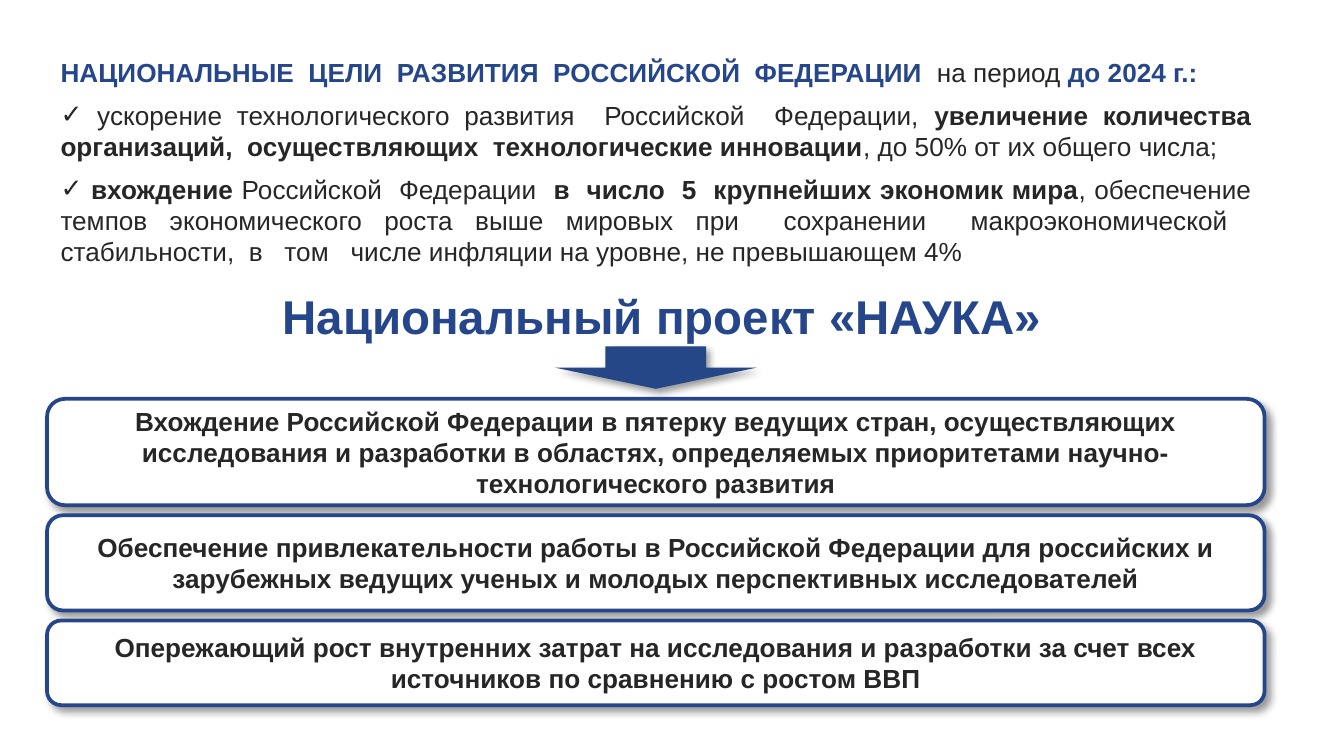
from lxml import etree
from pptx import Presentation
from pptx.dml.color import RGBColor
from pptx.enum.shapes import MSO_SHAPE
from pptx.enum.text import MSO_ANCHOR, MSO_AUTO_SIZE, PP_ALIGN
from pptx.oxml import parse_xml
from pptx.oxml.ns import qn
from pptx.util import Cm, Pt

ARROW, ROUND = MSO_SHAPE.DOWN_ARROW, MSO_SHAPE.ROUNDED_RECTANGLE
MIDDLE, TOP = MSO_ANCHOR.MIDDLE, MSO_ANCHOR.TOP
CENTER, JUSTIFY = PP_ALIGN.CENTER, PP_ALIGN.JUSTIFY
GROW, FIXED = MSO_AUTO_SIZE.SHAPE_TO_FIT_TEXT, MSO_AUTO_SIZE.NONE
BLUE, DARK, WHITE = "25468A", "262626", "FFFFFF"
LEFT, WIDTH, GAP = 0.89, 23.01, 0.19
SHADOW = (
    '<a:outerShdw xmlns:a="http://schemas.openxmlformats.org/drawingml/2006/main"'
    ' blurRad="50800" dist="38100" dir="2700000" algn="tl" rotWithShape="0">'
    '<a:srgbClr val="000000"><a:alpha val="40000"/></a:srgbClr></a:outerShdw>'
)


def style(run, size, color, bold=True):
    font = run.font
    font.name, font.size, font.bold = "Arial", Pt(size), bold
    font.color.rgb = RGBColor.from_string(color)


def add_block(kind, left, top, width, height, fill):
    block = slide.shapes.add_shape(kind, Cm(left), Cm(top), Cm(width), Cm(height))
    block.fill.solid()
    block.fill.fore_color.rgb = RGBColor.from_string(fill)
    block.shadow.inherit = False
    block._element.spPr.find(qn("a:effectLst")).append(parse_xml(SHADOW))
    return block


prs = Presentation()
prs.slide_width, prs.slide_height = Cm(25.4), Cm(14.29)
slide = prs.slides.add_slide(prs.slide_layouts[1])

# National goals: (text, bold) runs, the first paragraph is the heading
goals = [
    [("НАЦИОНАЛЬНЫЕ  ЦЕЛИ  РАЗВИТИЯ  РОССИЙСКОЙ  ФЕДЕРАЦИИ  ", True),
     ("на период ", False),
     ("до 2024 г.:", True)],
    [(" ускорение технологического развития  Российской  Федерации, ", False),
     ("увеличение количества организаций,  осуществляющих  "
      "технологические инновации", True),
     (", до 50% от их общего числа;", False)],
    [(" ", False),
     ("вхождение", True),
     (" Российской  Федерации  ", False),
     ("в  число  5  крупнейших экономик мира", True),
     (", обеспечение темпов экономического роста выше мировых при  сохранении  "
      "макроэкономической  стабильности,  в   том   числе инфляции на уровне, "
      "не превышающем 4%", False)],
]
body = slide.placeholders[1]
body.left, body.top, body.width, body.height = Cm(LEFT), Cm(0.94), Cm(WIDTH), Cm(4.27)
frame = body.text_frame
frame.word_wrap, frame.auto_size, frame.vertical_anchor = True, GROW, TOP
for i, goal in enumerate(goals):
    para = frame.add_paragraph() if i else frame.paragraphs[0]
    props = para._p.get_or_add_pPr()
    props.set("marL", "0")
    props.set("indent", "0")
    if i:
        etree.SubElement(props, qn("a:buFont"), typeface="Arial")
        etree.SubElement(props, qn("a:buChar"), char="✓")
    else:
        etree.SubElement(props, qn("a:buNone"))
    para.alignment = JUSTIFY
    para.space_before = Pt(0)
    para.space_after = Pt(6 if i < len(goals) - 1 else 0)
    for text, bold in goal:
        run = para.add_run()
        run.text = text
        style(run, 14, BLUE if bold and i == 0 else DARK, bold)

# Project title
title = slide.shapes.title
title.left, title.top, title.width, title.height = Cm(1.09), Cm(5.16), Cm(22.86), Cm(1.6)
title.text_frame.text = "Национальный проект «НАУКА»"
title.text_frame.auto_size = FIXED
title.text_frame.vertical_anchor = MIDDLE
para = title.text_frame.paragraphs[0]
para.alignment = CENTER
style(para.runs[0], 25.4, BLUE)

# Arrow from the title to the aims
arrow = add_block(ARROW, 10.49, 6.55, 3.81, 0.8, "254787")
arrow.line.fill.background()

# Project aims: height and text, stacked with equal gaps
aims = [
    (2.01, "Вхождение Российской Федерации в пятерку ведущих стран, осуществляющих "
           "исследования и разработки в областях, определяемых приоритетами "
           "научно-технологического развития"),
    (1.8, "Обеспечение привлекательности работы в Российской Федерации для российских "
          "и зарубежных ведущих ученых и молодых перспективных исследователей"),
    (1.6, "Опережающий рост внутренних затрат на исследования и разработки за счет "
          "всех источников по сравнению с ростом ВВП"),
]
top = 7.54
for height, text in aims:
    box = add_block(ROUND, LEFT, top, WIDTH, height, WHITE)
    box.line.color.rgb = RGBColor.from_string(BLUE)
    box.line.width = Pt(2)
    frame = box.text_frame
    frame.text = text
    frame.word_wrap, frame.vertical_anchor = True, MIDDLE
    frame.paragraphs[0].alignment = CENTER
    style(frame.paragraphs[0].runs[0], 14, DARK)
    top += height + GAP

prs.save("out.pptx")
